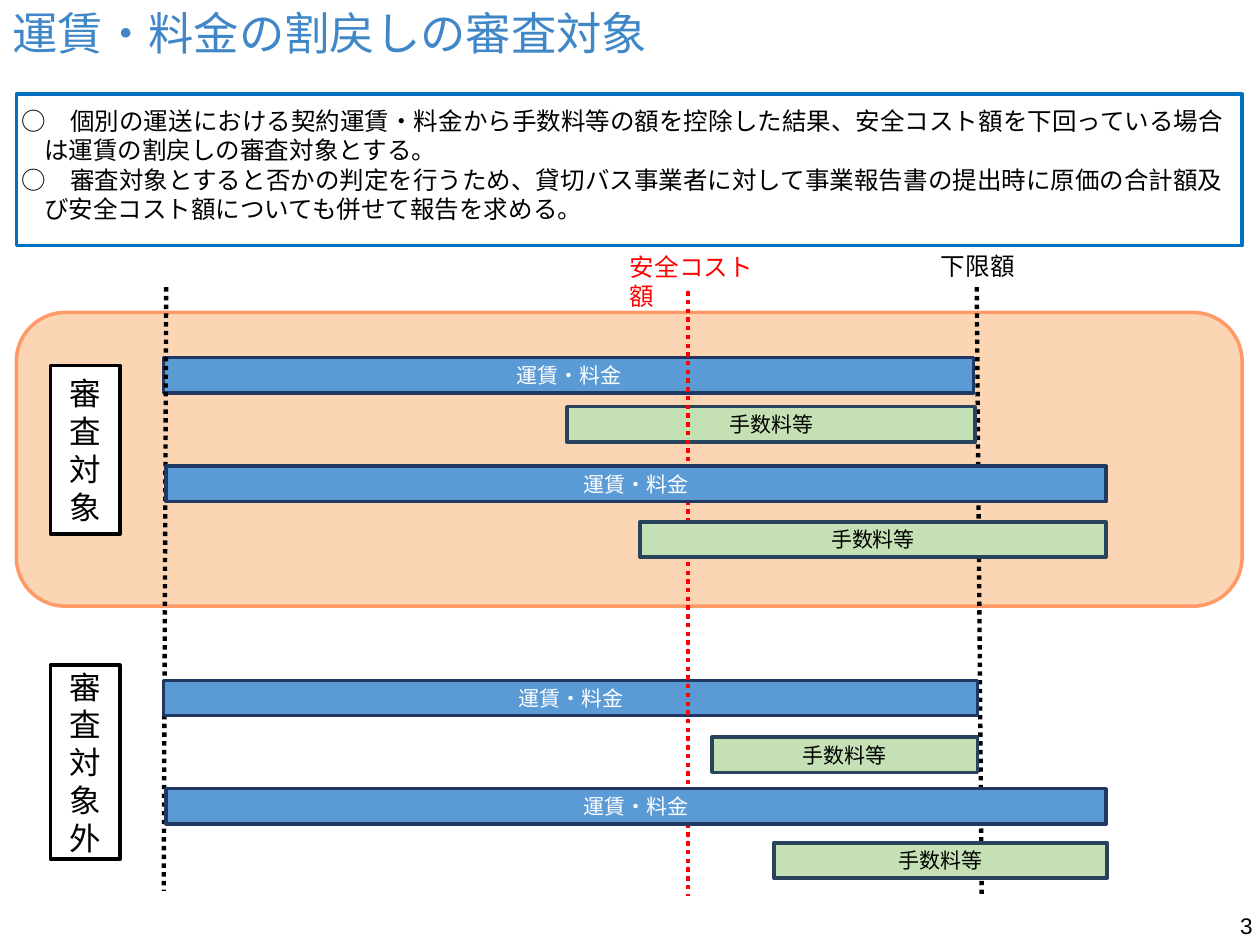
import pptx
import pptx.util
import pptx.dml.color
import pptx.enum.dml
import pptx.enum.shapes
import pptx.enum.text
import pptx.oxml.ns
from lxml import etree

Cm, Pt = pptx.util.Cm, pptx.util.Pt
SHAPE = pptx.enum.shapes.MSO_SHAPE
ALIGN = pptx.enum.text.PP_ALIGN
ANCHOR = pptx.enum.text.MSO_ANCHOR
GOTHIC = "Noto Sans CJK JP"
BLACK = "000000"

TITLE = "運賃・料金の割戻しの審査対象"
RULES = [
    "○　個別の運送における契約運賃・料金から手数料等の額を控除した結果、安全コスト額を下回っている場合は運賃の割戻しの審査対象とする。",
    "○　審査対象とすると否かの判定を行うため、貸切バス事業者に対して事業報告書の提出時に原価の合計額及び安全コスト額についても併せて報告を求める。",
]
PAGE = "3"

# All positions are in centimetres.
BAR_HEIGHT = 0.71
BAR_STYLES = {  # name: fill, line, text colour
    "運賃・料金": ("5B9BD5", "203864", "FFFFFF"),
    "手数料等": ("C5E0B4", "28445D", BLACK),
}
# Back to front: bars are (name, left, right, top),
# guides are ("guide", colour, start, end).
DIAGRAM = [
    ("運賃・料金", 3.3, 19.63, 7.21),
    ("guide", BLACK, (3.35, 5.79), (3.3, 17.96)),
    ("guide", BLACK, (19.69, 5.79), (19.79, 18.08)),
    ("手数料等", 11.43, 19.66, 8.2),
    ("運賃・料金", 3.3, 19.71, 13.72),
    ("guide", "FF0000", (13.87, 5.87), (13.87, 18.06)),
    ("手数料等", 14.35, 19.71, 14.86),
    ("運賃・料金", 3.35, 22.3, 9.4),
    ("手数料等", 12.9, 22.3, 10.52),
    ("運賃・料金", 3.35, 22.3, 15.9),
    ("手数料等", 15.6, 22.32, 16.99),
]
GROUPS = [  # paragraphs, top, height
    (["審査対象"], 7.37, 3.4),
    (["審査対象", "外"], 13.41, 3.91),
]
GUIDE_LABELS = [  # text, left, top, width, colour
    ("下限額", 18.72, 4.93, 2.97, BLACK),
    ("安全コスト額", 12.45, 4.95, 3.07, "FF0000"),
]

prs = pptx.Presentation()
prs.slide_width, prs.slide_height = Cm(25.4), Cm(19.05)
s = prs.slides.add_slide(prs.slide_layouts[6])


def rgb(value):
    return pptx.dml.color.RGBColor.from_string(value)


def write(sp, lines, size, color=BLACK, font=GOTHIC, align=ALIGN.LEFT,
          anchor=ANCHOR.TOP, hang=0):
    tf = sp.text_frame
    tf.word_wrap = True
    tf.vertical_anchor = anchor
    for i, line in enumerate(lines):
        p = tf.paragraphs[0] if i == 0 else tf.add_paragraph()
        p.alignment = align
        if hang:
            pPr = p._p.get_or_add_pPr()
            pPr.set("marL", str(Cm(hang)))
            pPr.set("indent", str(-Cm(hang)))
        r = p.add_run()
        r.text = line
        r.font.size, r.font.name = Pt(size), font
        r.font.color.rgb = rgb(color)
        ea = etree.SubElement(r._r.get_or_add_rPr(), pptx.oxml.ns.qn("a:ea"))
        ea.set("typeface", GOTHIC)


def add_text(left, top, width, height, lines, size, **style):
    sp = s.shapes.add_textbox(Cm(left), Cm(top), Cm(width), Cm(height))
    write(sp, lines, size, **style)


def add_box(left, top, width, height, fill, line, kind=SHAPE.RECTANGLE):
    sp = s.shapes.add_shape(kind, Cm(left), Cm(top), Cm(width), Cm(height))
    sp.shadow.inherit = False
    if fill:
        sp.fill.solid()
        sp.fill.fore_color.rgb = rgb(fill)
    else:
        sp.fill.background()
    sp.line.color.rgb = rgb(line)
    sp.line.width = Pt(2)
    return sp


def add_guide(color, start, end):
    """Draw a dotted threshold line."""
    c = s.shapes.add_connector(pptx.enum.shapes.MSO_CONNECTOR.STRAIGHT,
                               *map(Cm, start + end))
    c.line.color.rgb = rgb(color)
    c.line.width = Pt(2.5)
    c.line.dash_style = pptx.enum.dml.MSO_LINE.ROUND_DOT
    etree.SubElement(c._element.spPr, pptx.oxml.ns.qn("a:effectLst"))


def add_bar(name, left, right, top):
    fill, line, color = BAR_STYLES[name]
    sp = add_box(left, top, right - left, BAR_HEIGHT, fill, line)
    write(sp, [name], 12, color, align=ALIGN.CENTER, anchor=ANCHOR.MIDDLE)


add_box(0.33, 6.3, 24.71, 5.92, "FCD5B4", "FF9966", SHAPE.ROUNDED_RECTANGLE)
add_text(0, 0, 21.49, 1.32, [TITLE], 25.9, color="4087C8", anchor=ANCHOR.MIDDLE)
add_text(19.58, 18.26, 5.92, 1.32, [PAGE], 12.9, font="Arial", align=ALIGN.RIGHT)
add_text(0.18, 2.01, 25.02, 2.64, RULES, 14, hang=0.46)
add_box(0.33, 1.9, 24.71, 3.05, None, "0070C0")

for kind, *place in DIAGRAM:
    if kind == "guide":
        add_guide(*place)
    else:
        add_bar(kind, *place)

for text, left, top, width, color in GUIDE_LABELS:
    add_text(left, top, width, 0.86, [text], 14, color=color)

for lines, top, height in GROUPS:
    sp = add_box(1.02, top, 1.4, height, "FFFFFF", BLACK)
    write(sp, lines, 18, font="Arial", align=ALIGN.CENTER, anchor=ANCHOR.MIDDLE)

prs.save("out.pptx")
